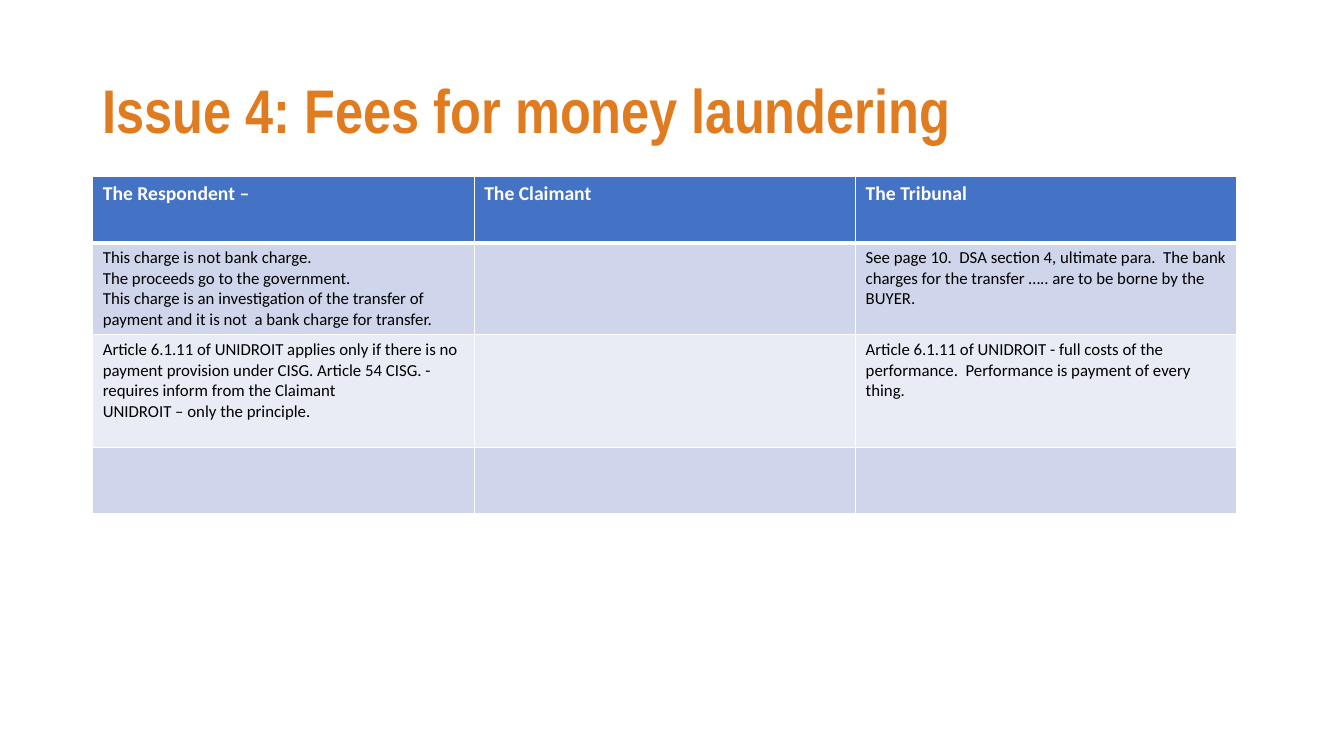
from lxml import etree
from pptx import Presentation
from pptx.dml.color import RGBColor
from pptx.enum import text
from pptx.oxml import ns
from pptx.util import Inches, Pt


def color(value):
    return RGBColor.from_string(value)


def add_border(cell, side, width):
    properties = cell._tc.get_or_add_tcPr()
    line = etree.SubElement(properties, ns.qn(f"a:ln{side}"), w=str(Pt(width)))
    fill = etree.SubElement(line, ns.qn("a:solidFill"))
    etree.SubElement(fill, ns.qn("a:srgbClr"), val="FFFFFF")


presentation = Presentation()
presentation.slide_width = Inches(13.33)
presentation.slide_height = Inches(7.5)
slide = presentation.slides.add_slide(presentation.slide_layouts[6])

# Title
title = slide.shapes.add_textbox(Inches(0.92), Inches(0.4), Inches(11.5), Inches(1.45))
title.text_frame.word_wrap = True
title.text_frame.vertical_anchor = text.MSO_ANCHOR.MIDDLE
title.text_frame.text = "Issue 4: Fees for money laundering"
paragraph = title.text_frame.paragraphs[0]
paragraph.line_spacing = 0.9
font = paragraph.runs[0].font
font.name, font.size, font.bold = "Arial Narrow", Pt(44), True
font.color.rgb = color("E17B1F")

# Arguments by party
arguments = [
    ["The Respondent –", "The Claimant", "The Tribunal"],
    [
        "This charge is not bank charge.\n"
        "The proceeds go to the government.\n"
        "This charge is an investigation of the transfer of payment and it is not  a bank charge for transfer.",
        "",
        "See page 10.  DSA section 4, ultimate para.  The bank charges for the transfer ….. "
        "are to be borne by the BUYER.",
    ],
    [
        "Article 6.1.11 of UNIDROIT applies only if there is no payment provision under CISG. "
        "Article 54 CISG. - requires inform from the Claimant\n"
        "UNIDROIT – only the principle.",
        "",
        "Article 6.1.11 of UNIDROIT - full costs of the performance.  Performance is payment of every thing.",
    ],
    ["", "", ""],
]
row_heights = [0.66, 0.91, 1.12, 0.66]
row_fills = ["4472C4", "CFD5EA", "E9EBF5", "CFD5EA"]

table = slide.shapes.add_table(
    len(arguments), 3, Inches(0.92), Inches(1.75), Inches(11.35), Inches(sum(row_heights))
).table
for column in table.columns:
    column.width = Inches(11.35 / 3)

for row_index, row_texts in enumerate(arguments):
    is_header = row_index == 0
    table.rows[row_index].height = Inches(row_heights[row_index])
    for column_index, cell_text in enumerate(row_texts):
        cell = table.cell(row_index, column_index)
        for side in "LRTB":
            heavy = (is_header and side == "B") or (row_index == 1 and side == "T")
            add_border(cell, side, 3 if heavy else 1)
        cell.fill.solid()
        cell.fill.fore_color.rgb = color(row_fills[row_index])
        cell.text_frame.text = cell_text
        for paragraph in cell.text_frame.paragraphs:
            for run in paragraph.runs:
                run.font.name = "Calibri"
                run.font.size = Pt(14 if is_header else 12)
                run.font.bold = is_header
                run.font.color.rgb = color("FFFFFF" if is_header else "000000")

presentation.save("out.pptx")
